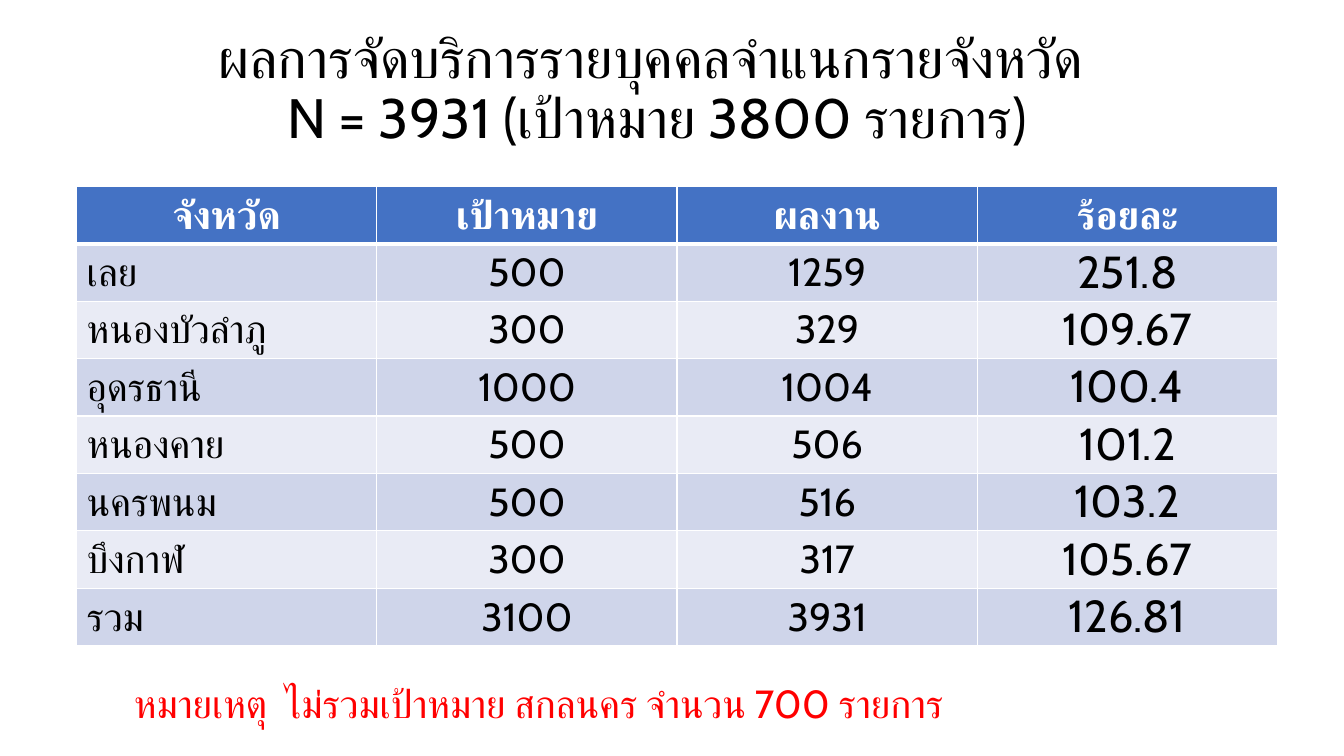
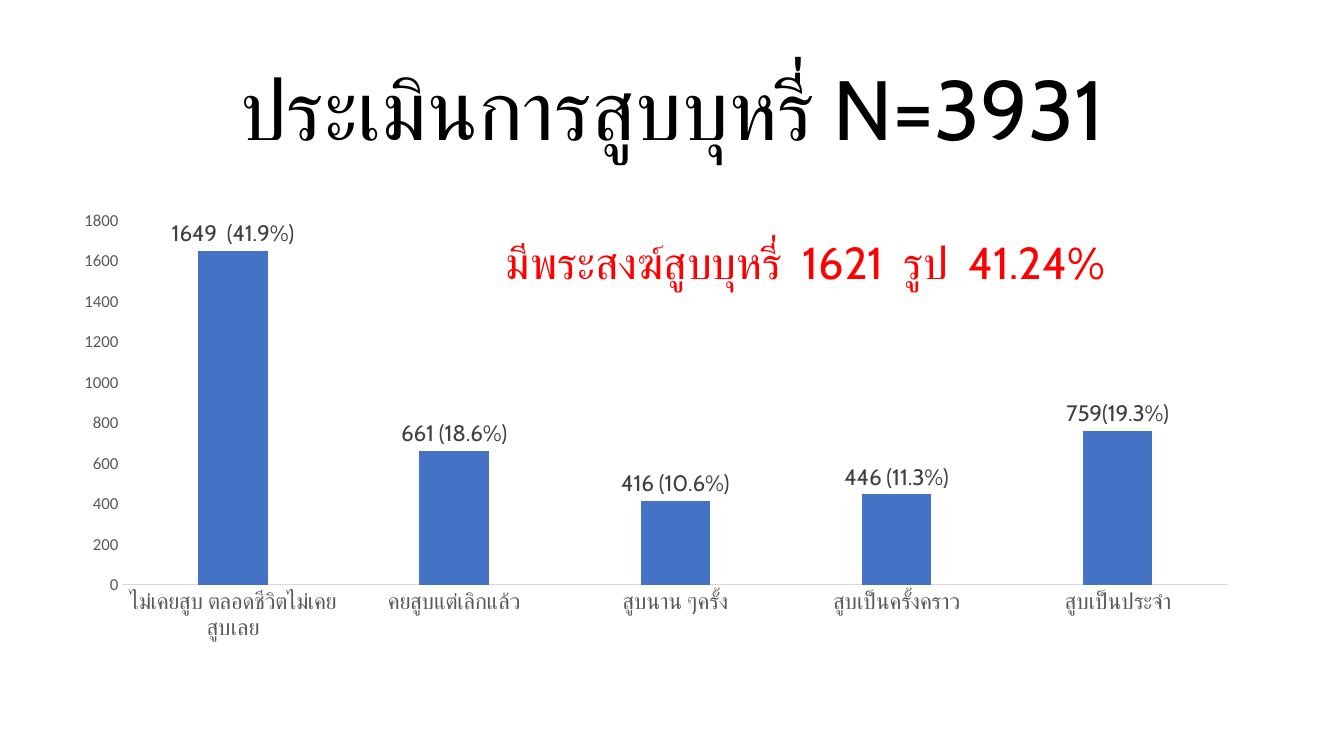
from dataclasses import dataclass

from lxml.etree import SubElement
from pptx import Presentation
from pptx.chart.data import CategoryChartData
from pptx.dml.color import RGBColor
from pptx.enum.chart import XL_CHART_TYPE, XL_LABEL_POSITION, XL_TICK_MARK
from pptx.enum.text import MSO_ANCHOR, PP_ALIGN
from pptx.oxml.ns import qn
from pptx.util import Inches, Pt


@dataclass(frozen=True)
class Theme:
    # Colours
    ink: str = "000000"
    paper: str = "FFFFFF"
    blue: str = "4472C4"
    bands: tuple = ("CFD5EA", "E9EBF5")
    alert: str = "FF0000"
    axis: str = "595959"
    label: str = "404040"
    rule: str = "D9D9D9"
    # Fonts and type sizes
    face: str = "Cabin"
    plain: str = "Calibri"
    head: float = 39.6
    hero: float = 60
    body: float = 28
    large: float = 32
    mark: float = 16
    tick: float = 12
    base: float = 10


THEME = Theme()


def rgb(code):
    return RGBColor.from_string(code)


def style(font, size, color=THEME.ink, face=THEME.face, bold=False):
    font.size, font.bold = Pt(size), bold
    font.color.rgb = rgb(color)
    font.name = face
    # Thai letters take the complex-script face
    SubElement(font._element, qn("a:cs"), typeface=face)


def write(frame, text, align=PP_ALIGN.LEFT, space=None, **look):
    par = frame.paragraphs[0]
    par.text = text
    par.alignment = align
    if space:
        par.line_spacing = space
    for run in par.runs:
        style(run.font, **look)


def edge(cell, base):
    """Draw the white cell borders, with a chosen bottom width."""
    props = cell._tc.get_or_add_tcPr()
    for side, width in (("L", 1), ("R", 1), ("T", 1), ("B", base)):
        line = SubElement(props, qn(f"a:ln{side}"), w=str(Pt(width)))
        fill = SubElement(line, qn("a:solidFill"))
        SubElement(fill, qn("a:srgbClr"), val=THEME.paper)


class Deck:
    """Holds the style and the current slide; places are percent of the slide."""

    def __init__(self, theme):
        self.theme = theme
        self.file = Presentation()
        self.file.slide_width = Inches(13.33)
        self.file.slide_height = Inches(7.5)
        self.slide = None

    def place(self, left, top, wide, high):
        width, height = self.file.slide_width, self.file.slide_height
        return [round(part * size / 100) for part, size in
                zip((left, top, wide, high), (width, height) * 2)]

    def page(self):
        self.slide = self.file.slides.add_slide(self.file.slide_layouts[6])

    def box(self, area, text, anchor=MSO_ANCHOR.TOP, **look):
        frame = self.slide.shapes.add_textbox(*self.place(*area)).text_frame
        frame.word_wrap = True
        frame.vertical_anchor = anchor
        write(frame, text, **look)

    def title(self, area, text, size):
        self.box(area, text, MSO_ANCHOR.MIDDLE, align=PP_ALIGN.CENTER,
                 space=0.9, size=size)

    def note(self, area, text, size):
        self.box(area, text, size=size, color=self.theme.alert)

    def table(self, area, rows, first, other):
        shape = self.slide.shapes.add_table(
            len(rows), len(rows[0]), *self.place(*area))
        grid = shape.table
        for r, row in enumerate(rows):
            grid.rows[r].height = Inches(other if r else first)
            for c, text in enumerate(row):
                self.cell(grid.cell(r, c), text, r, c, c == len(row) - 1)

    def cell(self, cell, text, r, c, last):
        look, head = self.theme, r == 0
        edge(cell, 3 if head else 1)
        cell.fill.solid()
        cell.fill.fore_color.rgb = rgb(
            look.blue if head else look.bands[(r - 1) % 2])
        wide = last and not head
        if wide:
            cell.margin_left = cell.margin_right = Inches(0.01)
            cell.margin_top, cell.margin_bottom = Inches(0.01), 0
        write(cell.text_frame, text,
              align=PP_ALIGN.CENTER if head or c else PP_ALIGN.LEFT,
              size=look.large if wide else look.body,
              color=look.paper if head else look.ink, bold=head)

    def chart(self, area, bars):
        look = self.theme
        data = CategoryChartData(number_format="###0")
        data.categories = [name for name, _, _ in bars]
        data.add_series("Series 1", [value for _, value, _ in bars])
        chart = self.slide.shapes.add_chart(
            XL_CHART_TYPE.COLUMN_CLUSTERED, *self.place(*area), data).chart
        chart.has_legend = chart.has_title = False
        style(chart.font, look.base, face=look.plain)

        # Bars and their labels
        plot = chart.plots[0]
        plot.gap_width, plot.overlap = 219, -27
        plot.vary_by_categories = False
        series = plot.series[0]
        series.format.fill.solid()
        series.format.fill.fore_color.rgb = rgb(look.blue)
        tags = series.data_labels
        tags.show_value = True
        tags.number_format, tags.number_format_is_linked = "###0", False
        tags.position = XL_LABEL_POSITION.OUTSIDE_END
        style(tags.font, look.mark, look.label)
        for i, (_, _, text) in enumerate(bars):
            tag = series.points[i].data_label
            write(tag.text_frame, text, align=PP_ALIGN.CENTER,
                  size=look.mark, color=look.label)
            tag.position = XL_LABEL_POSITION.OUTSIDE_END

        # Axes
        cats, vals = chart.category_axis, chart.value_axis
        for axis in (cats, vals):
            axis.major_tick_mark = axis.minor_tick_mark = XL_TICK_MARK.NONE
            axis.has_major_gridlines = False
        style(cats.tick_labels.font, look.mark, look.axis)
        style(vals.tick_labels.font, look.tick, look.axis, look.plain)
        cats.format.line.color.rgb = rgb(look.rule)
        cats.format.line.width = Pt(0.75)
        vals.format.line.fill.background()
        vals.minimum_scale, vals.maximum_scale = 0, 1800
        vals.major_unit = 200
        vals.tick_labels.number_format = "###0"
        vals.tick_labels.number_format_is_linked = False


ROWS = [
    ("จังหวัด", "เป้าหมาย", "ผลงาน", "ร้อยละ"),
    ("เลย", "500", "1259", "251.8"),
    ("หนองบัวลำภู", "300", "329", "109.67"),
    ("อุดรธานี", "1000", "1004", "100.4"),
    ("หนองคาย", "500", "506", "101.2"),
    ("นครพนม", "500", "516", "103.2"),
    ("บึงกาฬ", "300", "317", "105.67"),
    ("รวม", "3100", "3931", "126.81"),
]

BARS = [
    ("ไม่เคยสูบ ตลอดชีวิตไม่เคยสูบเลย", 1649, "1649  (41.9%)"),
    ("คยสูบแต่เลิกแล้ว", 661, "661 (18.6%)"),
    ("สูบนาน ๆครั้ง", 416, "416 (10.6%)"),
    ("สูบเป็นครั้งคราว", 446, "446 (11.3%)"),
    ("สูบเป็นประจำ", 759, "759(19.3%)"),
]


def main():
    deck = Deck(THEME)

    # Results by province
    deck.page()
    deck.title((3.75, 5.33, 89.35, 13.2),
               "ผลการจัดบริการรายบุคคลจำแนกรายจังหวัด\v"
               " N = 3931 (เป้าหมาย 3800 รายการ)", THEME.head)
    deck.table((5.7, 24.67, 89.35, 59.73), ROWS, first=0.48, other=0.57)
    deck.note((9.23, 89.2, 72.62, 7.6),
              "หมายเหตุ  ไม่รวมเป้าหมาย สกลนคร จำนวน 700 รายการ", THEME.body)

    # Smoking survey
    deck.page()
    deck.title((6.9, 5.33, 86.27, 19.33),
               "ประเมินการสูบบุหรี่ N=3931", THEME.hero)
    deck.chart((4.5, 26.67, 88.67, 59.33), BARS)
    deck.note((36.91, 30.4, 58.59, 8.53),
              "มีพระสงฆ์สูบบุหรี่  1621  รูป  41.24%", THEME.large)

    deck.file.save("out.pptx")


if __name__ == "__main__":
    main()
